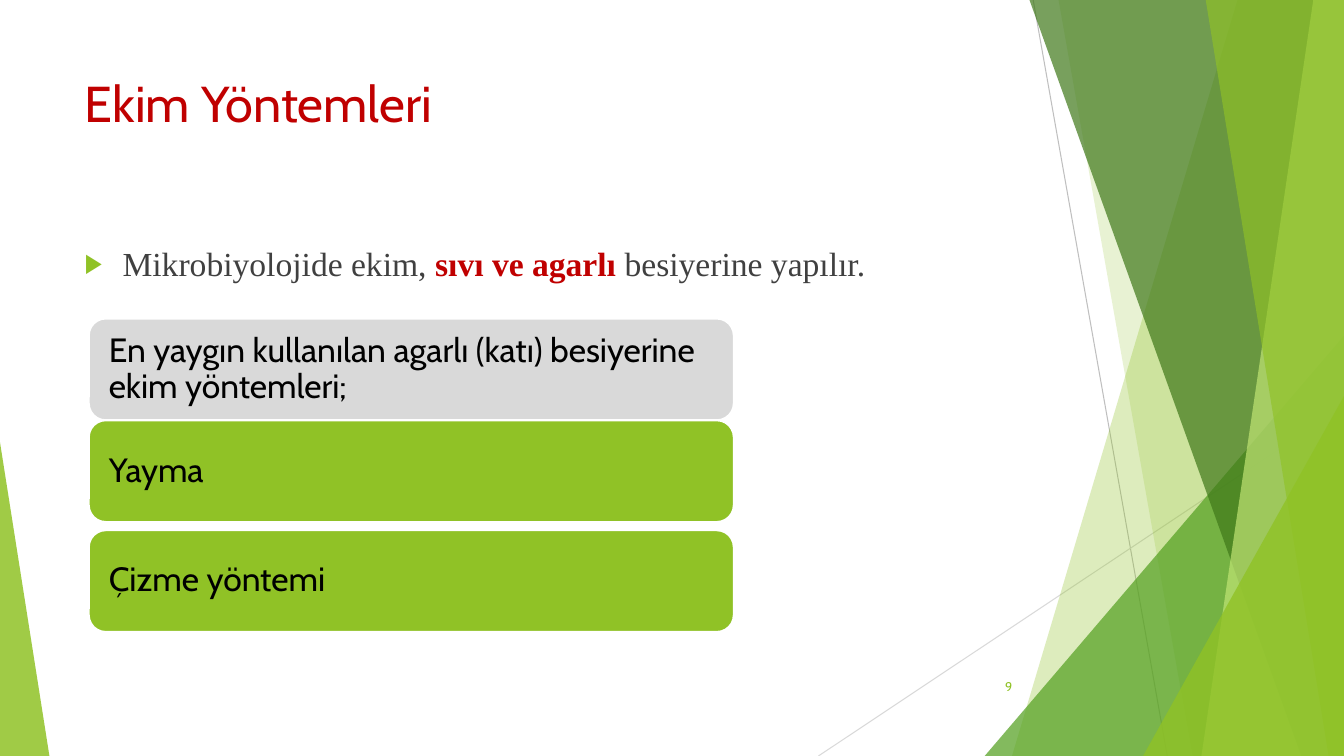
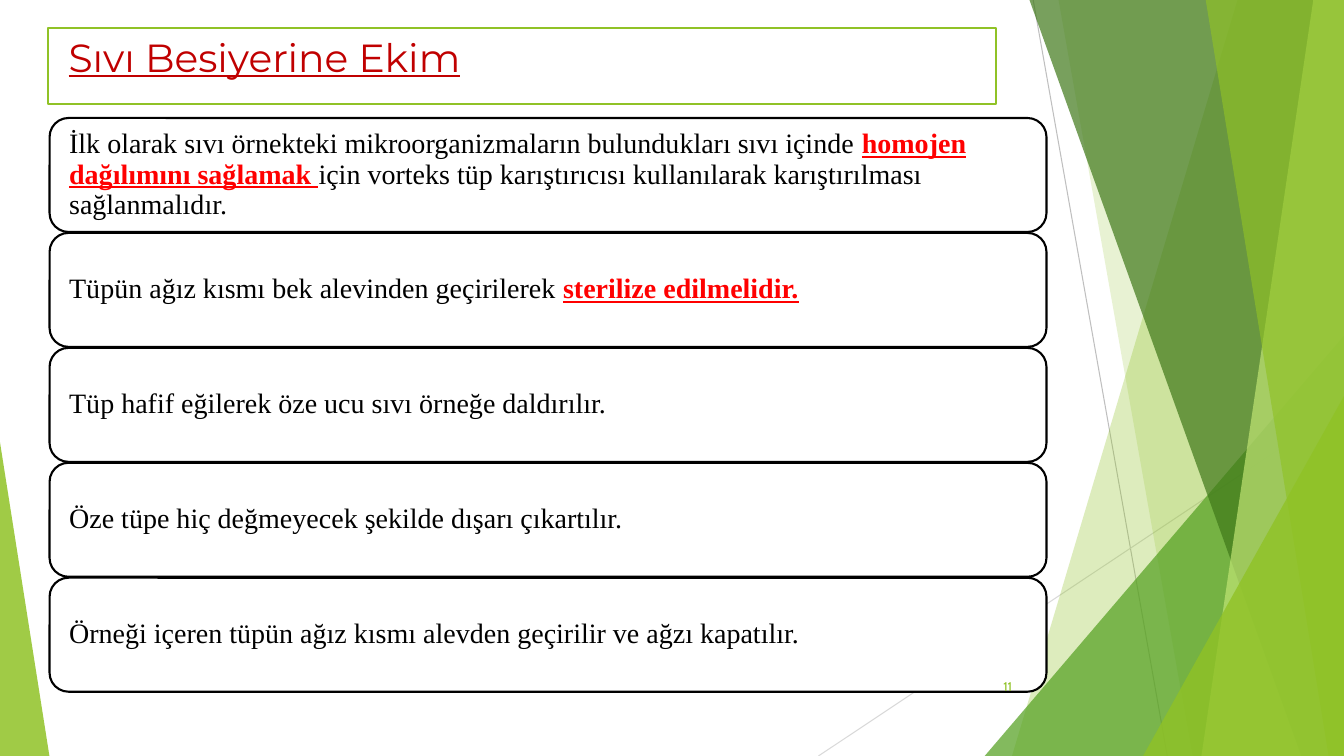
"""Builds two slides on inoculation methods over a shared faceted backdrop."""
from lxml import etree
from pptx import Presentation
from pptx.dml.color import RGBColor
from pptx.enum import shapes, text
from pptx.oxml.ns import qn
from pptx.util import Pt

COLOURS = {
    "lime": "90C226", "green": "54A021", "forest": "3F7819", "pale": "C0E474",
    "grey": "D9D9D9", "midgrey": "BFBFBF", "body": "404040",
    "crimson": "C00000", "red": "FF0000", "black": "000000", "white": "FFFFFF",
}
WIDTH, HEIGHT = 960, 540
BAND_TOP = -0.75

RAYS = [((738, 0), (833.8, HEIGHT), "midgrey"), ((WIDTH, 290), (584.6, HEIGHT), "grey")]
FACETS = [
    ("band", (884.2, 722.9), "lime", 30),
    ("band", (756, 851.8), "lime", 20),
    ("triangle", (703.4, 239.8, 256.6, 300.2), 1, "green", 72),
    ("band", (735.1, 929.5), "forest", 70),
    ("band", (938.2, 858.2), "pale", 70),
    ("band", (861.1, 949), "lime", 65),
    ("triangle", (816.5, 283, 143.5, 257), 1, "lime", 80),
    ("triangle", (0, 316, 35.3, 224), 0, "lime", 85),
]

PLAIN = {"bold": False, "underline": False}
KEYWORD = {"bold": True, "underline": True}
SERIF = "Times New Roman"

SLIDES = [
    {
        "layout": 1, "number": "9",
        "title": {"text": "Ekim Yöntemleri", "box": (53.3, 48.2, 676.8, 103.7),
                  "font": ("Cabin", 36), "format": PLAIN, "margin": 7.2},
        "body": [("Mikrobiyolojide ekim, ", "body", PLAIN),
                 ("sıvı ve agarlı ", "crimson", {"bold": True}),
                 ("besiyerine yapılır.", "body", PLAIN)],
        "cards": {
            "left": 63.4, "width": 460.8, "height": 72.7, "margin": 10.8,
            "tops": [227.5, 300.2, 378.7], "fills": ["grey", "lime", "lime"],
            "line": "white", "font": ("Cabin", 24),
            "items": [
                [("En yaygın kullanılan agarlı (katı) besiyerine ekim yöntemleri;", "black", PLAIN)],
                [("Yayma", "black", PLAIN)],
                [("Çizme yöntemi", "black", PLAIN)],
            ],
        },
    },
    {
        "layout": 5, "number": "11",
        "title": {"text": "Sıvı Besiyerine Ekim", "box": (34.5, 20.1, 676.8, 54),
                  "font": ("Montserrat", 28), "format": {"bold": False, "underline": True},
                  "margin": 14.5, "frame": "lime"},
        "cards": {
            "left": 35.4, "width": 712.1, "height": 81.4, "margin": 10,
            "tops": [84.3 + 82.1 * step for step in range(5)], "fills": ["white"] * 5,
            "line": "black", "font": (SERIF, 20),
            "items": [
                [("İlk olarak sıvı örnekteki mikroorganizmaların bulundukları sıvı içinde ", "black", PLAIN),
                 ("homojen dağılımını sağlamak ", "red", KEYWORD),
                 ("için vorteks tüp karıştırıcısı kullanılarak karıştırılması sağlanmalıdır.", "black", PLAIN)],
                [("Tüpün ağız kısmı bek alevinden geçirilerek ", "black", PLAIN),
                 ("sterilize edilmelidir.", "red", KEYWORD)],
                [("Tüp hafif eğilerek öze ucu sıvı örneğe daldırılır.", "black", PLAIN)],
                [("Öze tüpe hiç değmeyecek şekilde dışarı çıkartılır.", "black", PLAIN)],
                [("Örneği içeren tüpün ağız kısmı alevden geçirilir ve ağzı kapatılır.", "black", PLAIN)],
            ],
        },
    },
]


def rgb(name):
    return RGBColor.from_string(COLOURS[name])


def points(values):
    return [Pt(value) for value in values]


def assign(target, values):
    for name, value in values.items():
        setattr(target, name, value)


def place(part, box):
    assign(part, dict(zip(("left", "top", "width", "height"), points(box))))


def paint(part, fill, line=None, alpha=None):
    part.fill.solid()
    part.fill.fore_color.rgb = rgb(fill)
    if alpha is not None:
        colour = next(part.element.iter(qn("a:srgbClr")))
        etree.SubElement(colour, qn("a:alpha"), val=str(alpha * 1000))
    if line:
        part.line.color.rgb = rgb(line)
        part.line.width = Pt(1.5)
    else:
        part.line.fill.background()


def write(part, runs, font, anchor, margin=7.2, align=text.PP_ALIGN.LEFT, **spacing):
    frame = part.text_frame
    assign(frame, {"word_wrap": True, "auto_size": text.MSO_AUTO_SIZE.NONE,
                   "vertical_anchor": anchor, "margin_left": Pt(margin),
                   "margin_right": Pt(margin)})
    paragraph = frame.paragraphs[0]
    assign(paragraph, {"alignment": align, **spacing})
    for words, colour, style in runs:
        run = paragraph.add_run()
        run.text = words
        assign(run.font, {"name": font[0], "size": Pt(font[1]), **style})
        run.font.color.rgb = rgb(colour)
    return paragraph


def add_bullet(paragraph):
    props = paragraph._p.get_or_add_pPr()
    props.set("marL", str(Pt(27)))
    props.set("indent", str(-Pt(27)))
    colour = etree.SubElement(props, qn("a:buClr"))
    etree.SubElement(colour, qn("a:srgbClr"), val=COLOURS["lime"])
    etree.SubElement(props, qn("a:buSzPct"), val="80000")
    etree.SubElement(props, qn("a:buFont"), typeface="Arial")
    etree.SubElement(props, qn("a:buChar"), char="▶")


def add_facet(canvas, kind, geometry, *look):
    if kind == "band":
        top_x, bottom_x = geometry
        outline = canvas.build_freeform(Pt(top_x), Pt(BAND_TOP))
        corners = [(WIDTH, BAND_TOP), (WIDTH, HEIGHT), (bottom_x, HEIGHT)]
        outline.add_line_segments([points(corner) for corner in corners], close=True)
        facet = outline.convert_to_shape()
    else:
        apex, *look = look
        facet = canvas.add_shape(shapes.MSO_SHAPE.ISOSCELES_TRIANGLE, *points(geometry))
        facet.adjustments[0] = apex
    colour, alpha = look
    facet.shadow.inherit = False
    paint(facet, colour, alpha=alpha)
    return facet


def add_backdrop(slide, master):
    backdrop = []
    for start, end, colour in RAYS:
        ray = slide.shapes.add_connector(shapes.MSO_CONNECTOR.STRAIGHT, *points(start + end))
        ray.line.color.rgb = rgb(colour)
        ray.line.width = Pt(0.75)
        etree.SubElement(ray.element.spPr, qn("a:effectLst"))
        backdrop.append(ray)
    backdrop += [add_facet(slide.shapes, *facet) for facet in FACETS]
    for part in backdrop:
        master.shapes.element.append(part.element)


def add_title(slide, title):
    heading = slide.shapes.title
    place(heading, title["box"])
    if "frame" in title:
        paint(heading, "white", title["frame"])
    write(heading, [(title["text"], "crimson", title["format"])], title["font"],
          text.MSO_ANCHOR.TOP, title["margin"])


def add_body(slide, runs):
    body = slide.placeholders[1]
    place(body, (53.3, 169.9, 676.8, 305.3))
    add_bullet(write(body, runs, (SERIF, 24), text.MSO_ANCHOR.TOP, space_before=Pt(10)))


def add_cards(slide, cards):
    for top, fill, runs in zip(cards["tops"], cards["fills"], cards["items"]):
        box = points((cards["left"], top, cards["width"], cards["height"]))
        card = slide.shapes.add_shape(shapes.MSO_SHAPE.ROUNDED_RECTANGLE, *box)
        card.shadow.inherit = False
        paint(card, fill, cards["line"])
        write(card, runs, cards["font"], text.MSO_ANCHOR.MIDDLE, cards["margin"],
              line_spacing=0.9)


def add_number(slide, number):
    corner = slide.shapes.add_textbox(*points((676.1, 475.9, 54, 28.8)))
    write(corner, [(number, "lime", PLAIN)], ("Cabin", 9), text.MSO_ANCHOR.MIDDLE,
          align=text.PP_ALIGN.RIGHT)


def main():
    deck = Presentation()
    assign(deck, {"slide_width": Pt(WIDTH), "slide_height": Pt(HEIGHT)})
    for index, content in enumerate(SLIDES):
        slide = deck.slides.add_slide(deck.slide_layouts[content["layout"]])
        if index == 0:
            add_backdrop(slide, deck.slide_master)
        add_title(slide, content["title"])
        if "body" in content:
            add_body(slide, content["body"])
        add_cards(slide, content["cards"])
        add_number(slide, content["number"])
    deck.save("out.pptx")


if __name__ == "__main__":
    main()
